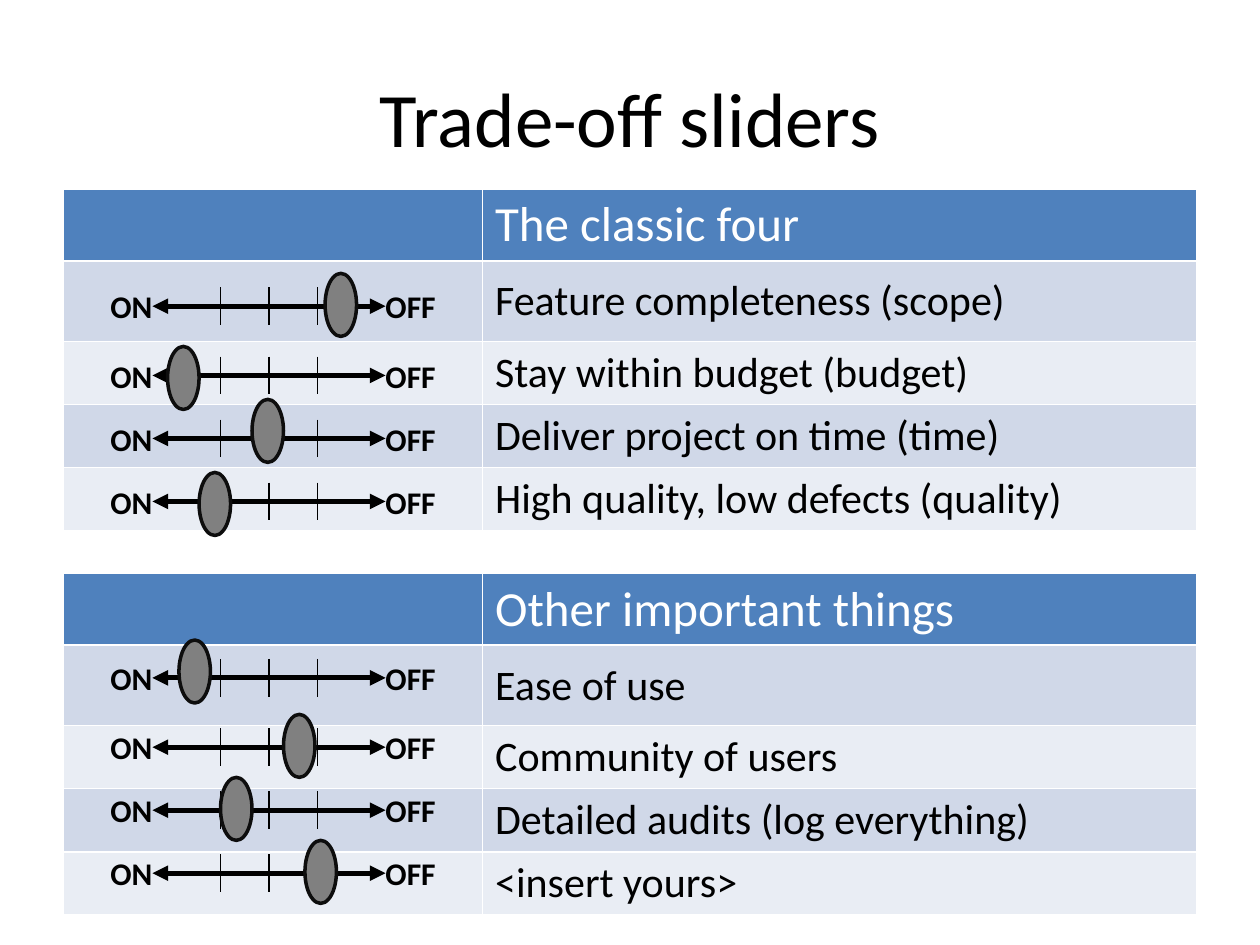
import pptx
import pptx.util
import pptx.dml.color
import pptx.enum.shapes
import pptx.enum.text
import pptx.oxml.ns
from lxml import etree

Inches = pptx.util.Inches
Pt = pptx.util.Pt
Align = pptx.enum.text.PP_ALIGN
Middle = pptx.enum.text.MSO_ANCHOR.MIDDLE
COLORS = {name: pptx.dml.color.RGBColor.from_string(value) for name, value in {
    "text": "000000", "header": "4F81BD", "header_text": "FFFFFF",
    "odd_row": "D0D8E8", "even_row": "E9EDF4",
    "knob": "808080", "knob_line": "0D0D0D",
}.items()}

# Each table: top, heading, then (label, slider centre, knob left, knob top)
TABLES = [
    (1.5, "The classic four", [
        ("Feature completeness (scope)", 2.43, 2.58, 2.17),
        ("Stay within budget (budget)", 2.98, 1.33, 2.75),
        ("Deliver project on time (time)", 3.48, 2, 3.17),
        ("High quality, low defects (quality)", 3.98, 1.58, 3.75),
    ]),
    (4.55, "Other important things", [
        ("Ease of use", 5.38, 1.42, 5.08),
        ("Community of users", 5.93, 2.25, 5.67),
        ("Detailed audits (log everything)", 6.43, 1.75, 6.17),
        ("<insert yours>", 6.93, 2.42, 6.67),
    ]),
]
ROW_HEIGHTS = [0.57, 0.64, 0.5, 0.5, 0.5]
TRACK_LEFT, TRACK_RIGHT = 1.21, 3.06
FIRST_TICK, TICK_GAP = 1.75, 0.385


def write(frame, text, size, color="text", bold=False, align=Align.LEFT):
    frame.text = text
    paragraph = frame.paragraphs[0]
    paragraph.alignment = align
    font = paragraph.font
    font.name, font.size, font.bold = "Calibri", Pt(size), bold
    font.color.rgb = COLORS[color]


def add_line(group, x1, y1, x2, y2, width):
    line = group.shapes.add_connector(
        pptx.enum.shapes.MSO_CONNECTOR.STRAIGHT,
        Inches(x1), Inches(y1), Inches(x2), Inches(y2))
    line.line.color.rgb = COLORS["text"]
    line.line.width = Pt(width)
    etree.SubElement(line._element.spPr, pptx.oxml.ns.qn("a:effectLst"))
    return line


presentation = pptx.Presentation()
presentation.slide_width, presentation.slide_height = Inches(10), Inches(7.5)
slide = presentation.slides.add_slide(presentation.slide_layouts[6])

title = slide.shapes.add_textbox(Inches(0.5), Inches(0.3), Inches(9), Inches(1.25))
title.text_frame.word_wrap = True
title.text_frame.vertical_anchor = Middle
write(title.text_frame, "Trade-off sliders", 44, align=Align.CENTER)

for top, heading, sliders in TABLES:
    table = slide.shapes.add_table(
        len(ROW_HEIGHTS), 2, Inches(0.5), Inches(top),
        Inches(9), Inches(sum(ROW_HEIGHTS))).table
    table.columns[0].width, table.columns[1].width = Inches(3.33), Inches(5.67)
    labels = [heading] + [slider[0] for slider in sliders]
    for row, (height, label) in enumerate(zip(ROW_HEIGHTS, labels)):
        table.rows[row].height = Inches(height)
        fill = "header" if row == 0 else "odd_row" if row % 2 else "even_row"
        for column in range(2):
            cell = table.cell(row, column)
            cell.fill.solid()
            cell.fill.fore_color.rgb = COLORS[fill]
        cell.vertical_anchor = Middle
        if row == 0:
            write(cell.text_frame, label, 28, "header_text")
        else:
            write(cell.text_frame, label, 24)
    first_label = table.cell(1, 1)
    first_label.margin_top = first_label.margin_bottom = Inches(0.12)

    for label, center, knob_left, knob_top in sliders:
        group = slide.shapes.add_group_shape()
        ends = []
        for text, left, width, align in [("ON", 0.83, 0.38, Align.RIGHT),
                                         ("OFF", TRACK_RIGHT, 0.5, Align.LEFT)]:
            box = group.shapes.add_textbox(
                Inches(left), Inches(center - 0.15), Inches(width), Inches(0.3))
            frame = box.text_frame
            frame.word_wrap = False
            frame.margin_left = frame.margin_right = 0
            frame.margin_top = frame.margin_bottom = 0
            write(frame, text, 18, bold=True, align=align)
            ends.append(box)

        track = add_line(group, TRACK_LEFT, center, TRACK_RIGHT, center, 3)
        track.begin_connect(ends[0], 3)
        track.end_connect(ends[1], 1)
        for end in ("a:headEnd", "a:tailEnd"):
            etree.SubElement(track.line._get_or_add_ln(), pptx.oxml.ns.qn(end),
                             type="triangle")
        for tick in range(3):
            x = FIRST_TICK + tick * TICK_GAP
            add_line(group, x, center - 0.15, x, center + 0.15, 1)

        knob = slide.shapes.add_shape(
            pptx.enum.shapes.MSO_SHAPE.OVAL, Inches(knob_left), Inches(knob_top),
            Inches(0.25), Inches(0.5))
        knob.shadow.inherit = False
        knob.fill.solid()
        knob.fill.fore_color.rgb = COLORS["knob"]
        knob.line.color.rgb = COLORS["knob_line"]
        knob.line.width = Pt(2)

presentation.save("out.pptx")
